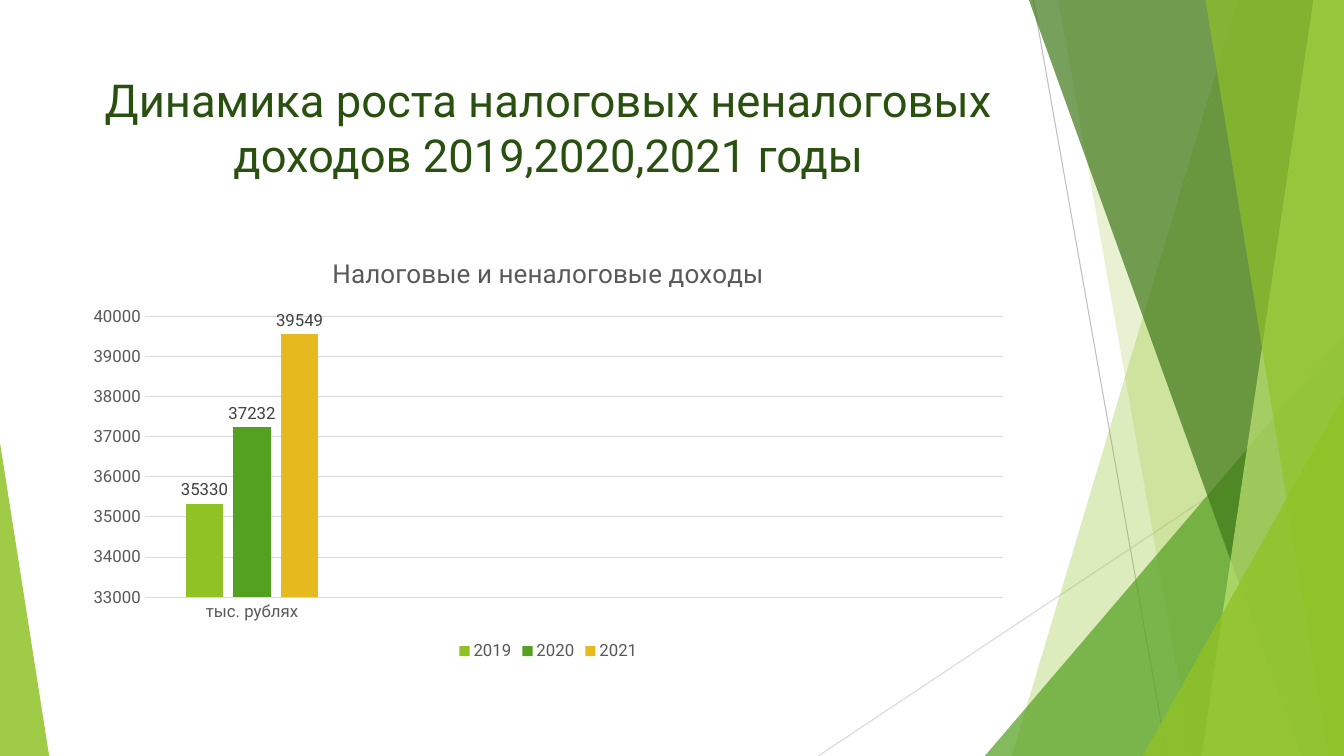
from lxml import etree
from pptx import Presentation
from pptx.chart.data import CategoryChartData
from pptx.dml.color import RGBColor
from pptx.enum.chart import XL_CHART_TYPE as CHART, XL_LABEL_POSITION as LABEL
from pptx.enum.chart import XL_LEGEND_POSITION as LEGEND, XL_TICK_MARK as TICK
from pptx.enum.shapes import MSO_CONNECTOR as CONNECTOR, MSO_SHAPE as SHAPE
from pptx.enum.text import MSO_ANCHOR as ANCHOR, MSO_AUTO_SIZE as AUTO, PP_ALIGN as ALIGN
from pptx.oxml.ns import qn
from pptx.util import Cm, Pt

FONT = "Roboto"
LIME = RGBColor(0x90, 0xC2, 0x26)
GREEN = RGBColor(0x54, 0xA0, 0x21)
GOLD = RGBColor(0xE6, 0xB9, 0x1E)
FOREST = RGBColor(0x3F, 0x78, 0x19)
PALE = RGBColor(0xC0, 0xE4, 0x74)
DARK = RGBColor(0x2A, 0x50, 0x10)
TEXT = RGBColor(0x59, 0x59, 0x59)
LABEL_TEXT = RGBColor(0x40, 0x40, 0x40)
GRAY = RGBColor(0xBF, 0xBF, 0xBF)
LIGHT = RGBColor(0xD9, 0xD9, 0xD9)

WIDTH, HEIGHT = 33.87, 19.05

RAYS = [
    (26.04, 0, 29.41, HEIGHT, GRAY),
    (WIDTH, 10.24, 20.62, HEIGHT, LIGHT),
]
BACK_BANDS = [(31.19, 25.5, LIME, 30), (26.67, 30.05, LIME, 20)]
FRONT_BANDS = [
    (25.93, 32.79, FOREST, 70),
    (33.1, 30.28, PALE, 70),
    (30.38, 33.48, LIME, 65),
]
SERIES = [("2019", 35330, LIME), ("2020", 37232, GREEN), ("2021", 39549, GOLD)]


def set_attrs(obj, values):
    for name, value in values.items():
        setattr(obj, name, value)


def set_font(font, size, color):
    set_attrs(font, {"name": FONT, "size": Pt(size), "bold": False})
    font.color.rgb = color


def set_line(line, color):
    line.color.rgb = color
    line.width = Pt(0.75)


def paint(sp, color, opacity):
    sp.shadow.inherit = False
    sp.fill.solid()
    sp.fill.fore_color.rgb = color
    sp.line.fill.background()
    clr = sp.element.spPr.find(f"{qn('a:solidFill')}/{qn('a:srgbClr')}")
    etree.SubElement(clr, qn("a:alpha")).set("val", str(opacity * 1000))


def add_ray(s, x1, y1, x2, y2, color):
    sp = s.shapes.add_connector(CONNECTOR.STRAIGHT, Cm(x1), Cm(y1), Cm(x2), Cm(y2))
    set_line(sp.line, color)
    etree.SubElement(sp.element.spPr, qn("a:effectLst"))


def add_band(s, top_x, bottom_x, color, opacity):
    builder = s.shapes.build_freeform(Cm(top_x), 0)
    corners = [(WIDTH, 0), (WIDTH, HEIGHT), (bottom_x, HEIGHT)]
    builder.add_line_segments([(Cm(x), Cm(y)) for x, y in corners])
    paint(builder.convert_to_shape(), color, opacity)


def add_corner(s, left, top, width, peak, color, opacity):
    sp = s.shapes.add_shape(
        SHAPE.ISOSCELES_TRIANGLE, Cm(left), Cm(top), Cm(width), Cm(HEIGHT - top)
    )
    sp.adjustments[0] = peak
    paint(sp, color, opacity)


def add_title(s, text):
    sp = s.shapes.title
    sp.element.getparent().append(sp.element)
    set_attrs(sp, {"left": Cm(1.88), "top": Cm(1.7), "width": Cm(23.88), "height": Cm(3.66)})
    tf = sp.text_frame
    tf.text = text
    set_attrs(tf, {"word_wrap": True, "auto_size": AUTO.NONE, "vertical_anchor": ANCHOR.TOP})
    p = tf.paragraphs[0]
    p.alignment = ALIGN.CENTER
    set_font(p.runs[0].font, 32.4, DARK)


def style_axes(chart):
    cat, val = chart.category_axis, chart.value_axis
    for axis in (cat, val):
        set_attrs(axis, {"major_tick_mark": TICK.NONE, "minor_tick_mark": TICK.NONE})
        set_font(axis.tick_labels.font, 12, TEXT)
    set_line(cat.format.line, LIGHT)
    val.format.line.fill.background()
    set_line(val.major_gridlines.format.line, LIGHT)
    set_attrs(val, {"minimum_scale": 33000, "maximum_scale": 40000, "major_unit": 1000})


def style_series(series, color):
    series.format.fill.solid()
    series.format.fill.fore_color.rgb = color
    labels = series.data_labels
    set_attrs(labels, {"show_value": True, "position": LABEL.OUTSIDE_END})
    set_font(labels.font, 12, LABEL_TEXT)


def add_income_chart(s):
    data = CategoryChartData()
    data.categories = ["тыс. рублях", "", "", ""]
    for name, value, _ in SERIES:
        data.add_series(name, [value, None, None, None])
    chart = s.shapes.add_chart(
        CHART.COLUMN_CLUSTERED, Cm(1.88), Cm(5.99), Cm(23.88), Cm(10.77), data
    ).chart
    set_font(chart.font, 10, TEXT)
    set_attrs(chart, {"has_title": True, "has_legend": True})
    tf = chart.chart_title.text_frame
    tf.text = "Налоговые и неналоговые доходы"
    set_font(tf.paragraphs[0].runs[0].font, 18.6, TEXT)
    set_attrs(chart.legend, {"position": LEGEND.BOTTOM, "include_in_layout": False})
    set_font(chart.legend.font, 12, TEXT)
    plot = chart.plots[0]
    set_attrs(plot, {"gap_width": 219, "overlap": -27, "vary_by_categories": False})
    for series, (_, _, color) in zip(plot.series, SERIES):
        style_series(series, color)
    style_axes(chart)


def main():
    prs = Presentation()
    set_attrs(prs, {"slide_width": Cm(WIDTH), "slide_height": Cm(HEIGHT)})
    s = prs.slides.add_slide(prs.slide_layouts[5])
    for ray in RAYS:
        add_ray(s, *ray)
    for band in BACK_BANDS:
        add_band(s, *band)
    add_corner(s, 24.82, 8.46, 9.05, 1, GREEN, 72)
    for band in FRONT_BANDS:
        add_band(s, *band)
    add_corner(s, 28.8, 9.98, 5.07, 1, LIME, 80)
    add_corner(s, 0, 11.15, 1.24, 0, LIME, 85)
    add_title(s, "Динамика роста налоговых неналоговых доходов 2019,2020,2021 годы")
    add_income_chart(s)
    prs.save("out.pptx")


if __name__ == "__main__":
    main()
